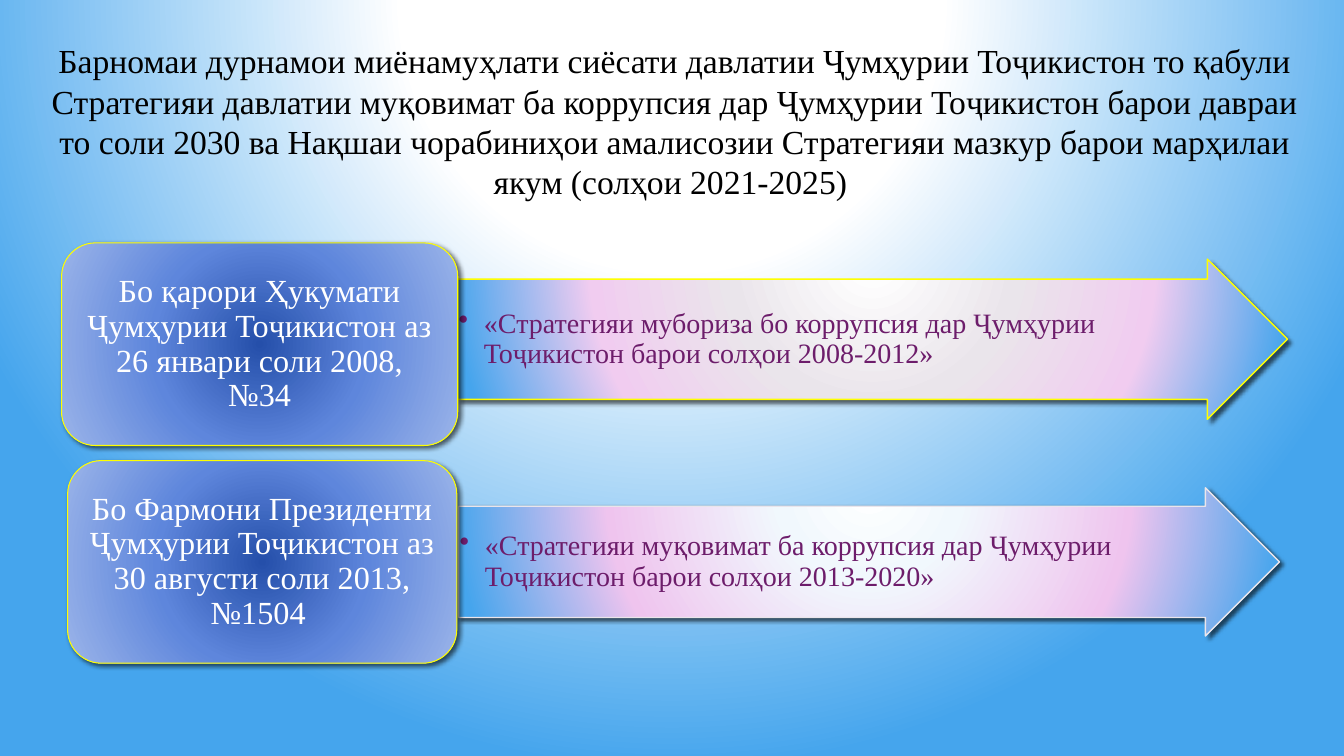
from dataclasses import dataclass
from lxml.etree import SubElement
from pptx import Presentation
from pptx.dml.color import RGBColor
from pptx.enum.shapes import MSO_SHAPE
from pptx.enum.text import MSO_ANCHOR, MSO_AUTO_SIZE, PP_ALIGN
from pptx.oxml.ns import qn
from pptx.util import Inches, Pt

WIDTH, HEIGHT = 13.33, 7.5


@dataclass(frozen=True)
class Theme:
    font: str = "Times New Roman"
    title_size: int = 24
    box_size: int = 23
    arrow_size: int = 20
    title: str = "000000"
    box_text: str = "FFFFFF"
    arrow_text: str = "6D1D6B"
    yellow: str = "FFFF00"
    pale: str = "EAE5EB"
    shadow: str = "000000"
    backdrop: tuple = ((0, "FFFFFF"), (35, "FFFFFF"), (100, "45A5ED"))
    box: tuple = ((0, "254FAA"), (48, "5E86DC"), (100, "9BB4E9"))
    arrow_grey: tuple = ((0, "FFFFFF"), (2, "FFFFFF"), (34, "EAE5EB"),
                         (67, "F1CCF0"), (100, "45A5ED"))
    arrow_white: tuple = ((0, "FFFFFF"), (22, "F1F8FD"), (63, "EFC4EE"),
                          (100, "45A5ED"))


THEME = Theme()
TALL = (50, -80, 50, 180)     # gradient focus: left, top, right, bottom in %
CENTRE = (50, 50, 50, 50)


def place(left, top, width, height):
    """Turn percentages of the slide into lengths."""
    return (Inches(WIDTH * left / 100), Inches(HEIGHT * top / 100),
            Inches(WIDTH * width / 100), Inches(HEIGHT * height / 100))


def add_color(parent, color, alpha=100):
    clr = SubElement(parent, qn("a:srgbClr"), val=color)
    if alpha < 100:
        SubElement(clr, qn("a:alpha"), val=str(alpha * 1000))


def radial_fill(fill, props, stops, focus):
    """Fill with a circular gradient around the focus rectangle."""
    fill.gradient()
    grad = props.find(qn("a:gradFill"))
    for child in list(grad):
        grad.remove(child)
    gs_list = SubElement(grad, qn("a:gsLst"))
    for pos, color in stops:
        add_color(SubElement(gs_list, qn("a:gs"), pos=str(pos * 1000)), color)
    circle = SubElement(grad, qn("a:path"))
    circle.set("path", "circle")
    SubElement(circle, qn("a:fillToRect"),
               {side: str(v * 1000) for side, v in zip("ltrb", focus)})


def add_shadow(shape, blur):
    shape.shadow.inherit = False
    effects = shape._element.spPr.find(qn("a:effectLst"))
    shadow = SubElement(effects, qn("a:outerShdw"), blurRad=str(Pt(blur)),
                        dist=str(Pt(2)), dir=str(45 * 60000), rotWithShape="0")
    add_color(shadow, THEME.shadow, 60)


def write_text(tf, text, *, size, color, align=PP_ALIGN.CENTER, spacing=1.0,
               anchor=MSO_ANCHOR.MIDDLE, insets=(0.1, 0.05, 0.1, 0.05)):
    tf.word_wrap = True
    tf.auto_size = MSO_AUTO_SIZE.NONE
    tf.vertical_anchor = anchor
    (tf.margin_left, tf.margin_top,
     tf.margin_right, tf.margin_bottom) = map(Inches, insets)
    p = tf.paragraphs[0]
    p.alignment, p.line_spacing = align, spacing
    r = p.add_run()
    r.text = text
    r.font.name, r.font.size = THEME.font, Pt(size)
    r.font.color.rgb = RGBColor.from_string(color)
    return p


def add_bullet(p):
    pPr = p._p.get_or_add_pPr()
    pPr.set("marL", str(Inches(0.25)))
    pPr.set("indent", str(Inches(-0.25)))
    SubElement(pPr, qn("a:buChar"), char="•")


def add_panel(s, kind, area, *, stops, focus, line, weight, blur):
    sp = s.shapes.add_shape(kind, *place(*area))
    radial_fill(sp.fill, sp._element.spPr, stops, focus)
    sp.line.color.rgb = RGBColor.from_string(line)
    sp.line.width = Pt(weight)
    add_shadow(sp, blur)
    return sp


def add_arrow(s, area, text, stops, line):
    sp = add_panel(s, MSO_SHAPE.RIGHT_ARROW, area, stops=stops, focus=TALL,
                   line=line, weight=1, blur=3)
    sp.adjustments[0], sp.adjustments[1] = 0.75, 0.5
    p = write_text(sp.text_frame, text, size=THEME.arrow_size,
                   color=THEME.arrow_text, align=PP_ALIGN.LEFT, spacing=0.9,
                   insets=(0.01, 0.01, 0.4, 0.01))
    add_bullet(p)


def add_box(s, area, text):
    sp = add_panel(s, MSO_SHAPE.ROUNDED_RECTANGLE, area, stops=THEME.box,
                   focus=CENTRE, line=THEME.yellow, weight=0.75, blur=3.5)
    write_text(sp.text_frame, text, size=THEME.box_size,
               color=THEME.box_text, spacing=0.9)


def add_title(s, area, text):
    title = s.shapes.title
    title.left, title.top, title.width, title.height = place(*area)
    write_text(title.text_frame, text, size=THEME.title_size,
               color=THEME.title, anchor=MSO_ANCHOR.TOP)


def main():
    prs = Presentation()
    prs.slide_width, prs.slide_height = Inches(WIDTH), Inches(HEIGHT)
    s = prs.slides.add_slide(prs.slide_layouts[5])

    # Background
    fill = s.background.fill
    fill.solid()
    radial_fill(fill, s._element.find(".//" + qn("p:bgPr")),
                THEME.backdrop, TALL)

    # Title
    add_title(s, (2.18, 4.67, 96.02, 22.93),
              "Барномаи дурнамои миёнамуҳлати сиёсати давлатии Ҷумҳурии "
              "Тоҷикистон то қабули Стратегияи давлатии муқовимат ба коррупсия "
              "дар Ҷумҳурии Тоҷикистон барои давраи то соли 2030 ва Нақшаи "
              "чорабиниҳои амалисозии Стратегияи мазкур барои марҳилаи якум "
              "(солҳои 2021-2025) ")

    # Decree boxes, each with the strategy it led to
    rows = [
        ((34.06, 34.27, 61.74, 21.2),
         "«Стратегияи мубориза бо коррупсия дар Ҷумҳурии Тоҷикистон "
         "барои солҳои 2008-2012»", THEME.arrow_grey, THEME.yellow,
         (4.58, 32.13, 29.48, 26.8),
         "Бо қарори Ҳукумати Ҷумҳурии Тоҷикистон аз 26 январи соли 2008, №34"),
        ((34.13, 64.53, 61.07, 19.6),
         "«Стратегияи муқовимат ба коррупсия дар Ҷумҳурии Тоҷикистон "
         "барои солҳои 2013-2020»", THEME.arrow_white, THEME.pale,
         (5.03, 60.93, 28.96, 26.8),
         "Бо Фармони Президенти Ҷумҳурии Тоҷикистон аз 30 августи соли 2013, "
         "№1504 "),
    ]
    for arrow_area, strategy, stops, line, box_area, decree in rows:
        add_arrow(s, arrow_area, strategy, stops, line)
        add_box(s, box_area, decree)

    prs.save("out.pptx")


if __name__ == "__main__":
    main()
